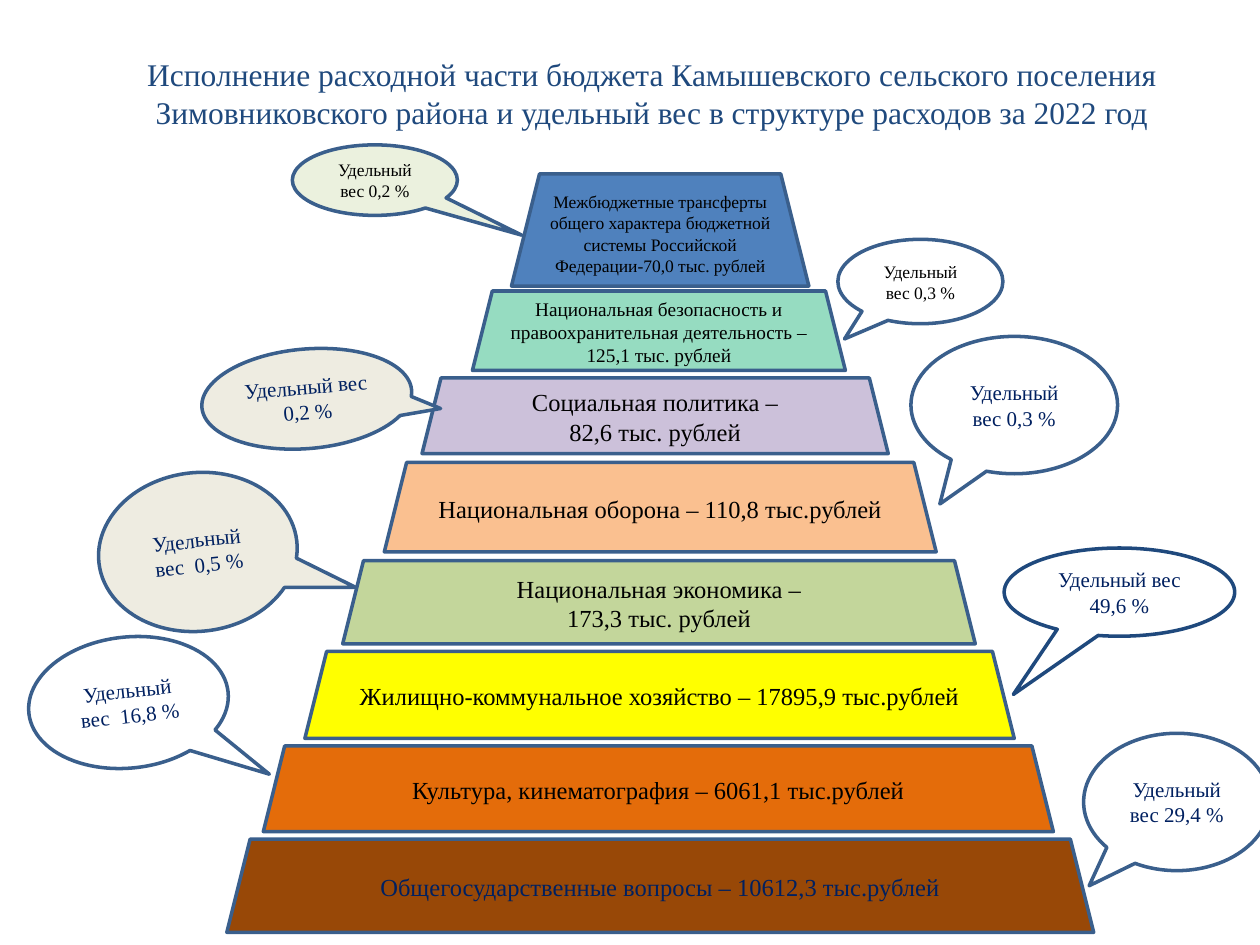
from pptx import Presentation
from pptx import util as u
from pptx.dml.color import RGBColor
from pptx.enum import shapes, text

FONT = "Times New Roman"
COLORS = {
    "title": "1F497D", "line": "3A5F8C", "navy": "002060", "black": "000000",
    "white": "FFFFFF", "beige": "EEECE1", "pale_green": "EBF1DE",
    "blue": "4F81BD", "mint": "96DCC1", "lilac": "CCC1DA", "peach": "FAC090",
    "green": "C3D69B", "yellow": "FFFF00", "orange": "E46C0A", "brown": "984807",
}

# Offsets from the pyramid's corner, size, fill, font size, font colour, lines
LEVELS = [
    (2.26, 0, 2.36, 0.89, "blue", 10, "black",
     ["Межбюджетные трансферты общего характера бюджетной системы Российской Федерации-70,0 тыс. рублей"]),
    (1.95, 0.93, 2.96, 0.63, "mint", 11, "black",
     ["Национальная безопасность и правоохранительная деятельность – 125,1 тыс. рублей"]),
    (1.55, 1.62, 3.7, 0.6, "lilac", 14, "black",
     ["Социальная политика –", "82,6 тыс. рублей"]),
    (1.25, 2.29, 4.38, 0.71, "peach", 14, "black",
     ["Национальная оборона – 110,8 тыс.рублей"]),
    (0.92, 3.07, 5.02, 0.66, "green", 14, "black",
     ["Национальная экономика –", "173,3 тыс. рублей"]),
    (0.62, 3.79, 5.63, 0.69, "yellow", 14, "black",
     ["Жилищно-коммунальное хозяйство – 17895,9 тыс.рублей"]),
    (0.29, 4.54, 6.27, 0.68, "orange", 14, "black",
     ["Культура, кинематография – 6061,1 тыс.рублей"]),
    (0, 5.28, 6.88, 0.74, "brown", 14, "navy",
     ["Общегосударственные вопросы – 10612,3 тыс.рублей"]),
]

# Box, tail, rotation, fill, line, font size, font colour, share
CALLOUTS = [
    ((2.32, 1.15, 1.31, 0.56), (0.89, 0.78), 0, "pale_green", "line", 10, "black", "0,2 %"),
    ((6.65, 1.9, 1.31, 0.67), (-0.46, 0.68), 0, "white", "line", 10, "black", "0,3 %"),
    ((2.04, 2.33, 0.79, 1.67), (-0.21, 0.63), 265.2, "beige", "line", 12, "navy", "0,2 %"),
    ((7.23, 2.67, 1.64, 1.09), (-0.36, 0.72), 0, "white", "line", 12, "navy", "0,3 %"),
    ((0.94, 3.59, 1.26, 1.58), (-0.33, 0.77), 263.8, "beige", "line", 12, "navy", " 0,5 %"),
    ((7.97, 4.35, 1.83, 0.7), (-0.46, 1.16), 0, "white", "title", 12, "navy", "49,6 %"),
    ((0.5, 4.78, 1.04, 1.59), (-0.66, 0.66), 263.8, "white", "line", 12, "navy", " 16,8 %"),
    ((8.6, 5.82, 1.48, 1.09), (-0.47, 0.61), 0, "white", "line", 12, "navy", "29,4 %"),
]


def rgb(name):
    return RGBColor.from_string(COLORS[name])


def write(tf, lines, size, color):
    tf.word_wrap = True
    for i, line in enumerate(lines):
        p = tf.add_paragraph() if i else tf.paragraphs[0]
        p.alignment = text.PP_ALIGN.CENTER
        r = p.add_run()
        r.text = line
        r.font.name = FONT
        r.font.size = u.Pt(size)
        r.font.color.rgb = rgb(color)


def add_outlined(s, kind, box, fill, line):
    sp = s.shapes.add_shape(kind, *map(u.Inches, box))
    sp.shadow.inherit = False
    sp.fill.solid()
    sp.fill.fore_color.rgb = rgb(fill)
    sp.line.color.rgb = rgb(line)
    sp.line.width = u.Pt(2)
    sp.text_frame.vertical_anchor = text.MSO_ANCHOR.MIDDLE
    return sp


def add_title(s, box):
    tf = s.shapes.add_textbox(*map(u.Inches, box)).text_frame
    write(tf, ["Исполнение расходной части бюджета Камышевского сельского поселения "
               "Зимовниковского района и удельный вес в структуре расходов за 2022 год"],
          18, "title")


def add_pyramid(s, left, top):
    for dx, dy, width, height, fill, size, color, lines in LEVELS:
        sp = add_outlined(s, shapes.MSO_SHAPE.TRAPEZOID,
                          (left + dx, top + dy, width, height), fill, "line")
        write(sp.text_frame, lines, size, color)


def add_callout(s, box, tail, rotation, fill, line, size, color, share):
    sp = add_outlined(s, shapes.MSO_SHAPE.OVAL_CALLOUT, box, fill, line)
    sp.adjustments[0], sp.adjustments[1] = tail
    if rotation:
        sp.rotation = rotation
        sp.text_frame._txBody.bodyPr.set("vert", "vert")
    write(sp.text_frame, [f"Удельный вес {share}"], size, color)


def main():
    prs = Presentation()
    prs.slide_width, prs.slide_height = u.Inches(10), u.Inches(7.5)
    s = prs.slides.add_slide(prs.slide_layouts[6])
    add_title(s, (0.35, 0.39, 9.65, 0.71))
    add_pyramid(s, 1.8, 1.38)
    for callout in CALLOUTS:
        add_callout(s, *callout)
    prs.save("out.pptx")


if __name__ == "__main__":
    main()
